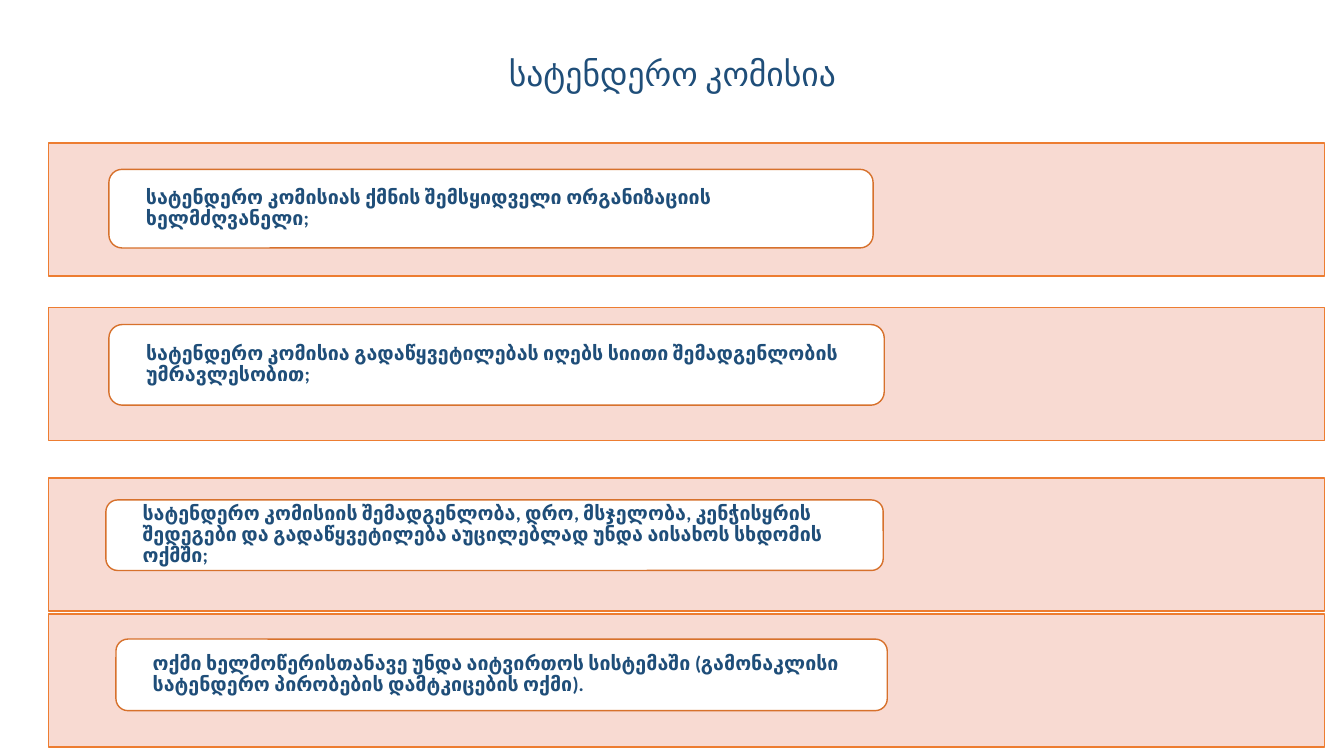
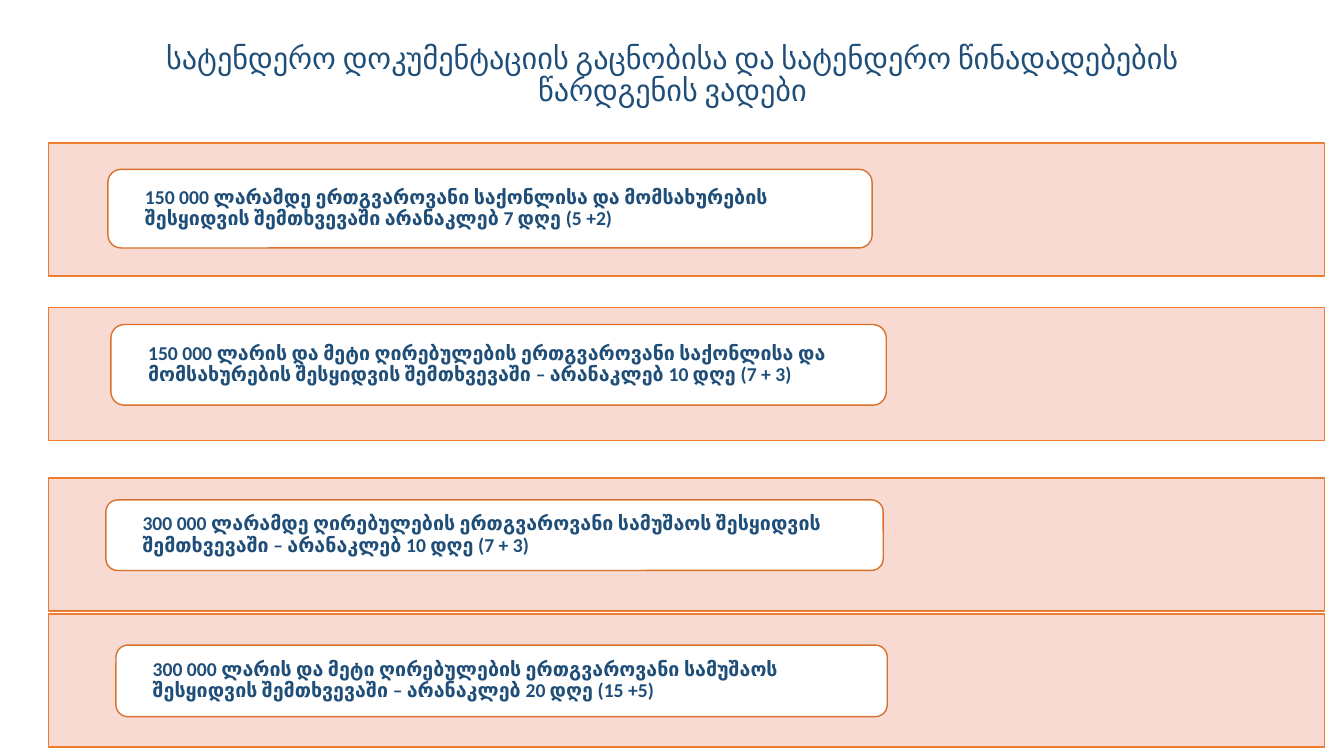
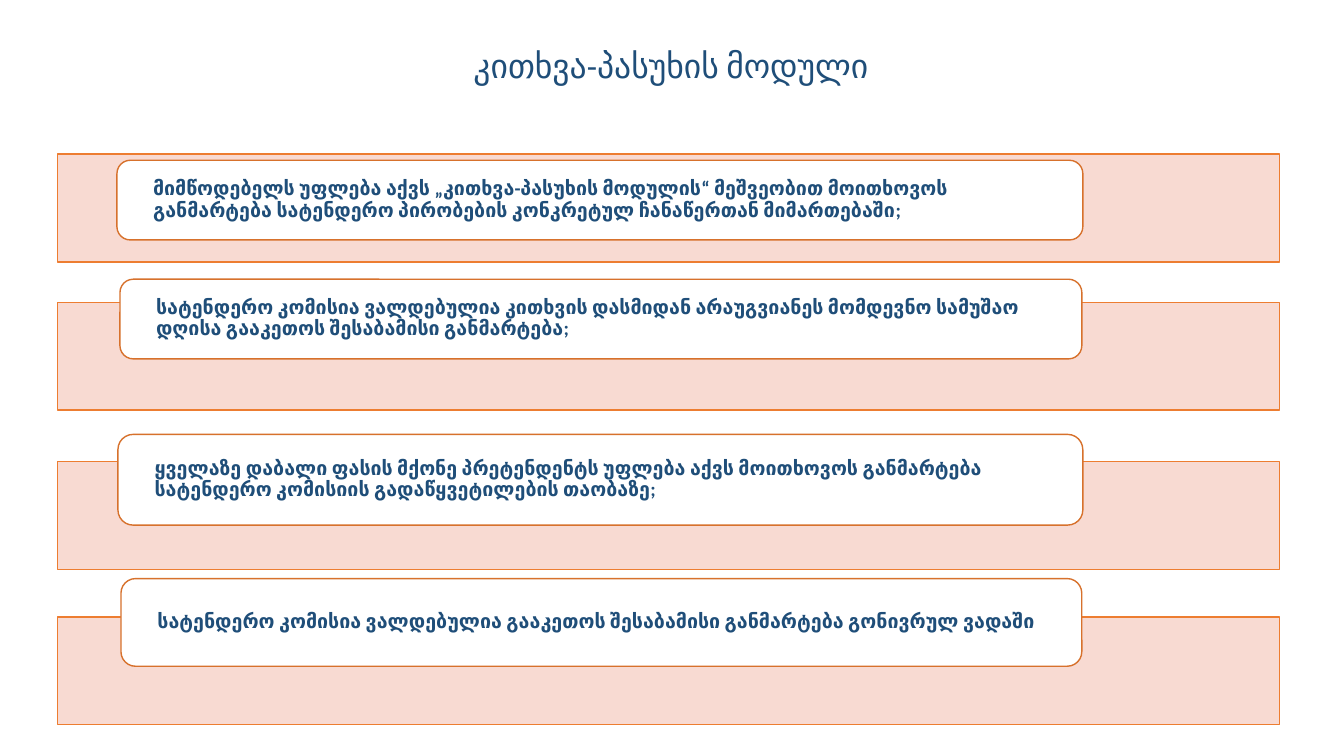
from pptx import Presentation
from pptx.dml.color import RGBColor
from pptx.enum.shapes import MSO_SHAPE as SHAPE
from pptx.enum.text import MSO_ANCHOR as ANCHOR, PP_ALIGN as ALIGN
from pptx.oxml.ns import qn
from pptx.util import Inches, Pt
from lxml.etree import SubElement

FONT = "Calibri"
NAVY = "1F4E79"
BAND_FILL, BAND_LINE = "F8D7CE", "ED7D31"
CARD_FILL, CARD_LINE = "FFFFFF", "D7712C"
BAND_ALPHA = 90

# Band geometry: left, width, height, tops
WIDE_BANDS = (0.48, 12.66, 1.32, (1.42, 3.05, 4.74, 6.09))
NARROW_BANDS = (0.57, 12.12, 1.07, (1.53, 3, 4.58, 6.12))
TITLE_BOX = (0.92, 0.45, 11.5, 0.6)

# Title, its size, line spacing and box; bands; card inset; cards (box, text)
SLIDES = [
    ("სატენდერო კომისია", 24, 0.9, TITLE_BOX, WIDE_BANDS, 0.33, [
        ((1.08, 1.68, 7.58, 0.78),
         "სატენდერო კომისიას ქმნის შემსყიდველი ორგანიზაციის ხელმძღვანელი;"),
        ((1.08, 3.22, 7.69, 0.8),
         "სატენდერო კომისია გადაწყვეტილებას იღებს სიითი შემადგენლობის უმრავლესობით;"),
        ((1.05, 4.96, 7.71, 0.7),
         "სატენდერო კომისიის შემადგენლობა, დრო, მსჯელობა, კენჭისყრის შედეგები და "
         "გადაწყვეტილება აუცილებლად უნდა აისახოს სხდომის ოქმში;"),
        ((1.15, 6.34, 7.65, 0.71),
         "ოქმი ხელმოწერისთანავე უნდა აიტვირთოს სისტემაში (გამონაკლისი "
         "სატენდერო პირობების დამტკიცების ოქმი)."),
    ]),
    ("სატენდერო დოკუმენტაციის გაცნობისა და სატენდერო წინადადებების წარდგენის ვადები",
     21.6, 0.9, TITLE_BOX, WIDE_BANDS, 0.33, [
        ((1.07, 1.68, 7.58, 0.78),
         "150 000 ლარამდე ერთგვაროვანი საქონლისა და მომსახურების შესყიდვის "
         "შემთხვევაში არანაკლებ 7 დღე (5 +2)"),
        ((1.1, 3.22, 7.69, 0.8),
         "150 000 ლარის და მეტი ღირებულების ერთგვაროვანი საქონლისა და მომსახურების "
         "შესყიდვის შემთხვევაში – არანაკლებ 10 დღე (7 + 3)"),
        ((1.05, 4.96, 7.71, 0.7),
         "300 000 ლარამდე ღირებულების ერთგვაროვანი სამუშაოს შესყიდვის "
         "შემთხვევაში – არანაკლებ 10 დღე (7 + 3)"),
        ((1.15, 6.4, 7.65, 0.71),
         "300 000 ლარის და მეტი ღირებულების ერთგვაროვანი სამუშაოს შესყიდვის "
         "შემთხვევაში – არანაკლებ 20 დღე (15 +5)"),
    ]),
    ("კითხვა-პასუხის მოდული", 24, 1.0, (0.95, 0.4, 11.41, 0.5), NARROW_BANDS, 0.32, [
        ((1.16, 1.59, 9.58, 0.79),
         "მიმწოდებელს უფლება აქვს „კითხვა-პასუხის მოდულის“ მეშვეობით მოითხოვოს "
         "განმარტება სატენდერო პირობების კონკრეტულ ჩანაწერთან მიმართებაში;"),
        ((1.19, 2.77, 9.54, 0.79),
         "სატენდერო კომისია ვალდებულია კითხვის დასმიდან არაუგვიანეს მომდევნო "
         "სამუშაო დღისა გააკეთოს შესაბამისი განმარტება;"),
        ((1.17, 4.31, 9.57, 0.9),
         "ყველაზე დაბალი ფასის მქონე პრეტენდენტს უფლება აქვს მოითხოვოს განმარტება "
         "სატენდერო კომისიის გადაწყვეტილების თაობაზე;"),
        ((1.2, 5.74, 9.53, 0.87),
         "სატენდერო კომისია ვალდებულია გააკეთოს შესაბამისი განმარტება გონივრულ ვადაში"),
    ]),
]


def add_box(s, kind, box, fill, line):
    sp = s.shapes.add_shape(kind, *map(Inches, box))
    sp.shadow.inherit = False
    sp.fill.solid()
    sp.fill.fore_color.rgb = RGBColor.from_string(fill)
    sp.line.color.rgb = RGBColor.from_string(line)
    sp.line.width = Pt(1)
    return sp


def set_text(sp, text, size, align, spacing=0.9, bold=False):
    tf = sp.text_frame
    tf.word_wrap = True
    tf.vertical_anchor = ANCHOR.MIDDLE
    tf.text = text
    p = tf.paragraphs[0]
    p.alignment = align
    p.line_spacing = spacing
    font = p.runs[0].font
    font.name = FONT
    font.size = Pt(size)
    font.bold = bold
    font.color.rgb = RGBColor.from_string(NAVY)
    return tf


prs = Presentation()
prs.slide_width, prs.slide_height = Inches(13.33), Inches(7.5)

for title, size, spacing, title_box, bands, inset, cards in SLIDES:
    s = prs.slides.add_slide(prs.slide_layouts[6])
    tb = s.shapes.add_textbox(*map(Inches, title_box))
    set_text(tb, title, size, ALIGN.CENTER, spacing)

    left, width, height, tops = bands
    for top, (card_box, text) in zip(tops, cards):
        band = add_box(s, SHAPE.RECTANGLE, (left, top, width, height), BAND_FILL, BAND_LINE)
        color = band.fill._xPr.find(qn("a:solidFill"))[0]
        SubElement(color, qn("a:alpha"), val=str(BAND_ALPHA * 1000))

        card = add_box(s, SHAPE.ROUNDED_RECTANGLE, card_box, CARD_FILL, CARD_LINE)
        tf = set_text(card, text, 14, ALIGN.LEFT, bold=True)
        tf.margin_left = tf.margin_right = Inches(inset)
        tf.margin_top = tf.margin_bottom = 0

prs.save("out.pptx")
